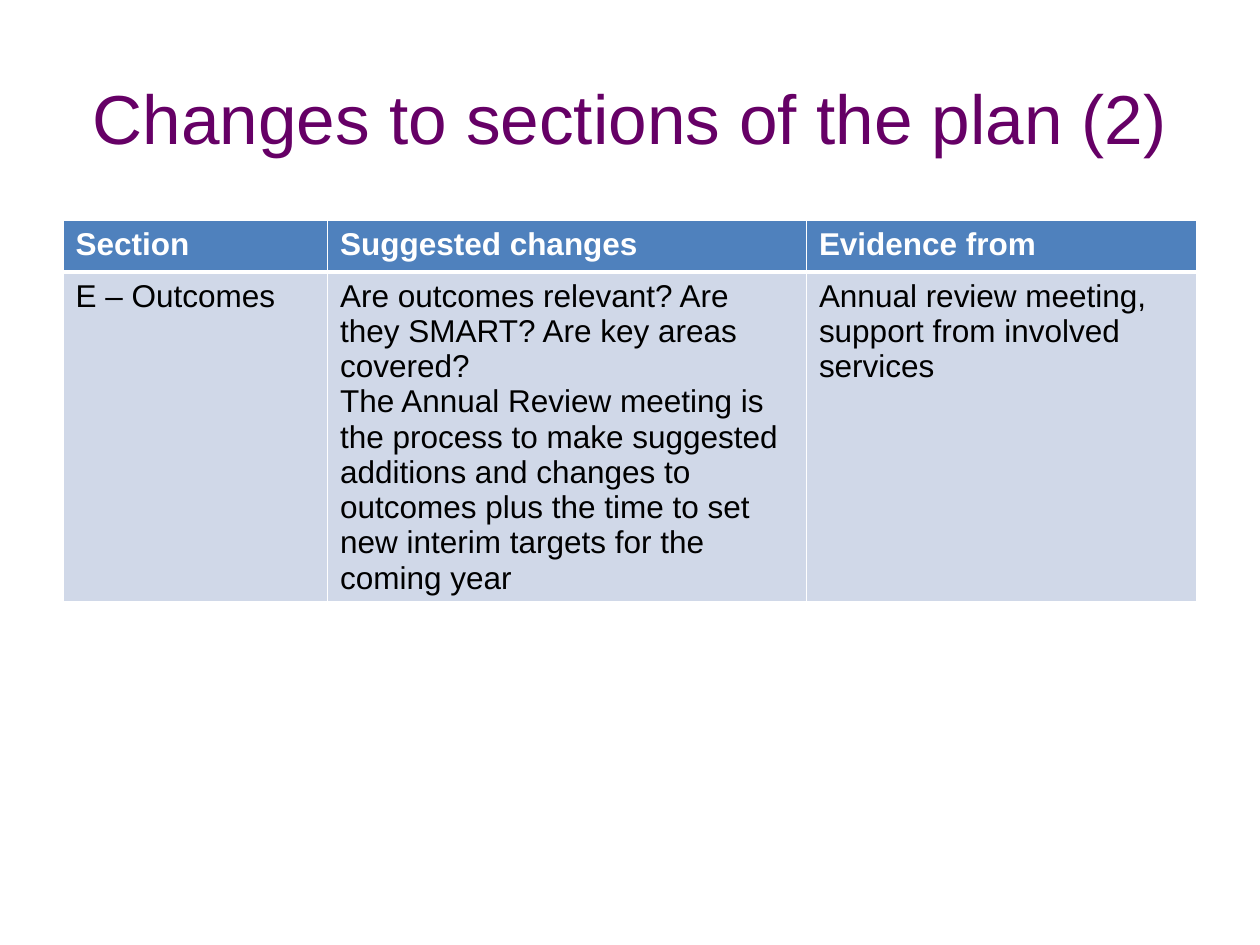
from pptx import Presentation
from pptx.dml.color import RGBColor
from pptx.enum.text import MSO_ANCHOR, PP_ALIGN
from pptx.oxml import parse_xml
from pptx.oxml.ns import nsdecls
from pptx.util import Inches, Pt

CENTER = PP_ALIGN.CENTER
MIDDLE = MSO_ANCHOR.MIDDLE
PURPLE = RGBColor(0x66, 0x00, 0x66)
WHITE = RGBColor(0xFF, 0xFF, 0xFF)
BLACK = RGBColor(0x00, 0x00, 0x00)
BLUE = RGBColor(0x4F, 0x81, 0xBD)
PALE_BLUE = RGBColor(0xD0, 0xD8, 0xE8)

TITLE_FORMAT = {"name": "Arial", "size": Pt(39.6), "bold": False}
HEADER_FORMAT = {"name": "Arial", "size": Pt(18), "bold": True}
BODY_FORMAT = {"name": "Arial", "size": Pt(18), "bold": False}

COLUMN_WIDTHS = [2.1, 3.8, 3.1]
ROWS = [
    (0.41, ["Section", "Suggested changes", "Evidence from"],
     BLUE, WHITE, HEADER_FORMAT, 3),
    (2.62, [
        "E – Outcomes",
        "Are outcomes relevant? Are they SMART? Are key areas covered?\n"
        "The Annual Review meeting is the process to make suggested additions "
        "and changes to outcomes plus the time to set new interim targets "
        "for the coming year",
        "Annual review meeting, support from involved services",
    ], PALE_BLUE, BLACK, BODY_FORMAT, 1),
]


def format_text(frame, settings, color):
    for para in frame.paragraphs:
        for span in para.runs:
            for name, value in settings.items():
                setattr(span.font, name, value)
            span.font.color.rgb = color


def set_borders(cell, widths):
    properties = cell._tc.get_or_add_tcPr()
    for position, (side, width) in enumerate(widths.items()):
        line = parse_xml(
            f'<a:ln{side} {nsdecls("a")} w="{Pt(width)}"><a:solidFill>'
            f'<a:srgbClr val="{WHITE}"/></a:solidFill></a:ln{side}>')
        properties.insert(position, line)


deck = Presentation()
deck.slide_width = Inches(10)
deck.slide_height = Inches(7.5)
page = deck.slides.add_slide(deck.slide_layouts[5])

title = page.shapes.title
title.left, title.top = Inches(0.5), Inches(0.3)
title.width, title.height = Inches(9), Inches(1.25)
title.text_frame.text = "Changes to sections of the plan (2)"
title.text_frame.vertical_anchor = MIDDLE
title.text_frame.paragraphs[0].alignment = CENTER
format_text(title.text_frame, TITLE_FORMAT, PURPLE)

table = page.shapes.add_table(
    len(ROWS), len(COLUMN_WIDTHS), Inches(0.5), Inches(1.75),
    Inches(sum(COLUMN_WIDTHS)), Inches(sum(row[0] for row in ROWS))).table
for column, width in zip(table.columns, COLUMN_WIDTHS):
    column.width = Inches(width)

top_border = 1
for row, (height, texts, fill, color, settings, bottom_border) in zip(table.rows, ROWS):
    row.height = Inches(height)
    for cell, text in zip(row.cells, texts):
        cell.text = text
        cell.fill.solid()
        cell.fill.fore_color.rgb = fill
        format_text(cell.text_frame, settings, color)
        set_borders(cell, {"L": 1, "R": 1, "T": top_border, "B": bottom_border})
    top_border = bottom_border

deck.save("out.pptx")
